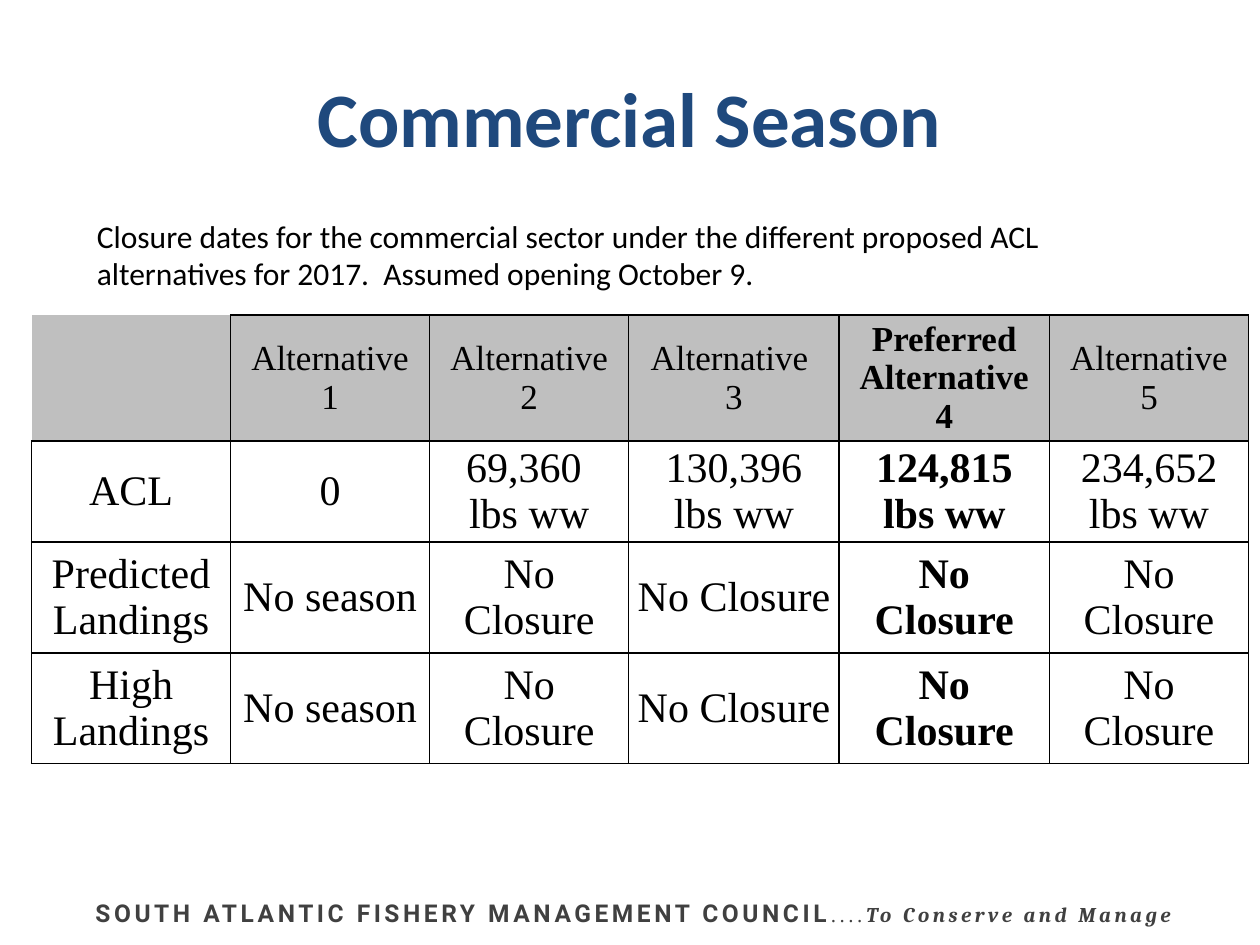
"""Build the Commercial Season slide with its closure table."""
from lxml.etree import SubElement
from pptx import Presentation
from pptx.dml.color import RGBColor
from pptx.enum.text import MSO_ANCHOR, PP_ALIGN
from pptx.oxml.ns import qn
from pptx.util import Inches, Pt

THEME = {
    "title": {"name": "Calibri", "size": Pt(44), "bold": True, "color": "1F497D"},
    "body": {"name": "Calibri", "size": Pt(18), "bold": False, "color": "000000"},
    "header": {"name": "Times New Roman", "size": Pt(20), "color": "000000"},
    "cell": {"name": "Times New Roman", "size": Pt(24), "color": "000000"},
    "council": {"name": "Roboto", "size": Pt(14), "bold": True, "color": "404040"},
    "dots": {"name": "Times New Roman", "size": Pt(12), "bold": False, "color": "404040"},
    "motto": {"name": "Cambria", "size": Pt(12), "bold": True, "italic": True, "color": "404040"},
    "header_fill": "BFBFBF",
    "border": "000000",
}


def format_font(font, values):
    for name, value in values.items():
        if name == "color":
            font.color.rgb = RGBColor.from_string(value)
        else:
            setattr(font, name, value)


def draw_borders(cell, visible_sides):
    properties = cell._tc.get_or_add_tcPr()
    for side in "LRTB":
        line = SubElement(properties, qn(f"a:ln{side}"), w=str(Pt(1)))
        if side in visible_sides:
            fill = SubElement(line, qn("a:solidFill"))
            SubElement(fill, qn("a:srgbClr"), val=THEME["border"])
        else:
            SubElement(line, qn("a:noFill"))


presentation = Presentation()
presentation.slide_width, presentation.slide_height = Inches(10), Inches(7.5)
slide = presentation.slides.add_slide(presentation.slide_layouts[5])

title = slide.shapes.title
title.left, title.top, title.width, title.height = Inches(0.5), Inches(0.3), Inches(9), Inches(1.25)
title.text_frame.text = "Commercial Season"
title.text_frame.vertical_anchor = MSO_ANCHOR.MIDDLE
title.text_frame.paragraphs[0].alignment = PP_ALIGN.CENTER
format_font(title.text_frame.paragraphs[0].runs[0].font, THEME["title"])

caption = slide.shapes.add_textbox(Inches(0.67), Inches(1.67), Inches(8.42), Inches(0.71))
caption.text_frame.word_wrap = True
caption.text_frame.text = (
    "Closure dates for the commercial sector under the different proposed ACL "
    "alternatives for 2017.  Assumed opening October 9."
)
format_font(caption.text_frame.paragraphs[0].runs[0].font, THEME["body"])

closures = ["No season"] + ["No Closure"] * 4
rows = [
    ["", "Alternative 1", "Alternative 2", "Alternative \n3", "Preferred Alternative 4", "Alternative 5"],
    ["ACL", "0", "69,360 \nlbs ww", "130,396 lbs ww", "124,815 lbs ww", "234,652 lbs ww"],
    ["Predicted Landings", *closures],
    ["High Landings", *closures],
]
column_widths = [1.58, 1.58, 1.58, 1.67, 1.67, 1.58]
row_heights = [1, 0.8, 0.88, 0.88]
preferred_column = 4
cell_format = {
    "vertical_anchor": MSO_ANCHOR.MIDDLE,
    "margin_left": Inches(0.07),
    "margin_right": Inches(0.07),
    "margin_top": 0,
    "margin_bottom": 0,
}

table = slide.shapes.add_table(
    len(rows), len(column_widths), Inches(0.25), Inches(2.5),
    Inches(sum(column_widths)), Inches(sum(row_heights)),
).table
table.first_row = table.horz_banding = False
for column, width in zip(table.columns, column_widths):
    column.width = Inches(width)
for row, height in zip(table.rows, row_heights):
    row.height = Inches(height)

for row_index, texts in enumerate(rows):
    for column_index, text in enumerate(texts):
        cell = table.cell(row_index, column_index)
        for name, value in cell_format.items():
            setattr(cell, name, value)
        draw_borders(cell, "LRTB" if text else "RB")
        if row_index == 0:
            cell.fill.solid()
            cell.fill.fore_color.rgb = RGBColor.from_string(THEME["header_fill"])
        else:
            cell.fill.background()
        cell.text_frame.text = text
        style = THEME["cell" if row_index else "header"]
        for paragraph in cell.text_frame.paragraphs:
            paragraph.alignment = PP_ALIGN.CENTER
            for run in paragraph.runs:
                format_font(run.font, {**style, "bold": column_index == preferred_column})

footer = slide.shapes.add_textbox(Inches(0.66), Inches(7.08), Inches(9.34), Inches(0.34))
footer.text_frame.word_wrap = True
footer_parts = [
    ("SOUTH ATLANTIC FISHERY MANAGEMENT COUNCIL", "council"),
    ("....", "dots"),
    ("To Conserve and Manage", "motto"),
]
for text, style_name in footer_parts:
    run = footer.text_frame.paragraphs[0].add_run()
    run.text = text
    format_font(run.font, THEME[style_name])
    run._r.get_or_add_rPr().set("spc", "200")

presentation.save("out.pptx")
